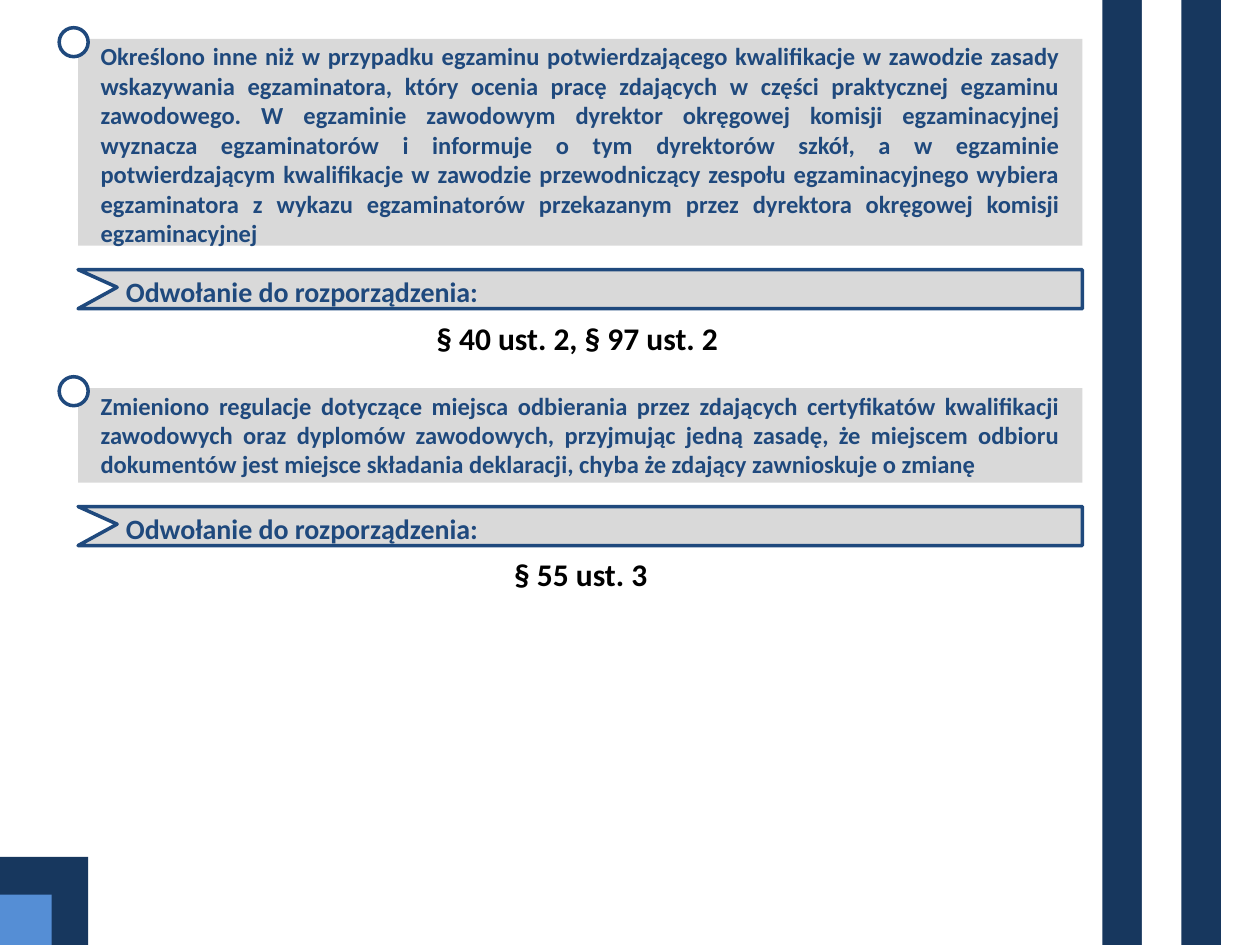
from dataclasses import dataclass

from pptx import Presentation
from pptx.dml.color import RGBColor
from pptx.enum.shapes import MSO_SHAPE as Shape
from pptx.enum.text import MSO_ANCHOR as Anchor, PP_ALIGN as Align
from pptx.util import Inches, Pt


@dataclass(frozen=True)
class Theme:
    font: str = "Calibri"
    navy: str = "17375E"
    blue: str = "558ED5"
    accent: str = "1F497D"
    panel: str = "D9D9D9"
    white: str = "FFFFFF"
    black: str = "000000"
    body_size: int = 14
    heading_size: int = 16
    reference_size: int = 18
    line_width: int = 2


THEME = Theme()
SLIDE_WIDTH, SLIDE_HEIGHT = 10, 7.5
BANNER_HEIGHT = 0.31
SECTIONS = [
    (0.31, 1.64,
     "Określono inne niż w przypadku egzaminu potwierdzającego kwalifikacje w zawodzie "
     "zasady wskazywania egzaminatora, który ocenia pracę zdających w części praktycznej "
     "egzaminu zawodowego. W egzaminie zawodowym dyrektor okręgowej komisji egzaminacyjnej "
     "wyznacza egzaminatorów i informuje o tym dyrektorów szkół, a w egzaminie "
     "potwierdzającym kwalifikacje w zawodzie przewodniczący zespołu egzaminacyjnego "
     "wybiera egzaminatora z wykazu egzaminatorów przekazanym przez dyrektora okręgowej "
     "komisji egzaminacyjnej",
     "§ 40 ust. 2, § 97 ust. 2 "),
    (3.08, 0.75,
     "Zmieniono regulacje dotyczące miejsca odbierania przez zdających certyfikatów "
     "kwalifikacji zawodowych oraz dyplomów zawodowych, przyjmując jedną zasadę, że "
     "miejscem odbioru dokumentów jest miejsce składania deklaracji, chyba że zdający "
     "zawnioskuje o zmianę",
     "§ 55 ust. 3"),
]


def style_shape(shape, fill, line=None):
    shape.shadow.inherit = False
    shape.fill.solid()
    shape.fill.fore_color.rgb = RGBColor.from_string(fill)
    if line:
        shape.line.color.rgb = RGBColor.from_string(line)
        shape.line.width = Pt(THEME.line_width)
    else:
        shape.line.fill.background()


def add_block(slide, kind, left, top, width, height, fill, line=None):
    shape = slide.shapes.add_shape(
        kind, Inches(left), Inches(top), Inches(width), Inches(height))
    style_shape(shape, fill, line)


def write_text(frame, text, size, color, align):
    frame.word_wrap = True
    paragraph = frame.paragraphs[0]
    paragraph.alignment = align
    run = paragraph.add_run()
    run.text = text
    run.font.name = THEME.font
    run.font.size = Pt(size)
    run.font.bold = True
    run.font.color.rgb = RGBColor.from_string(color)


def add_text(slide, left, top, width, height, text, size, color, align):
    box = slide.shapes.add_textbox(
        Inches(left), Inches(top), Inches(width), Inches(height))
    write_text(box.text_frame, text, size, color, align)


def add_banner(slide, left, top, width, height, text):
    """Draw a heading bar with a notch cut into its left side."""
    right, bottom = left + width, top + height
    notch = (left + height, top + 0.14)
    corners = [(right, top), (right, bottom), (left, bottom), notch]
    builder = slide.shapes.build_freeform(Inches(left), Inches(top))
    builder.add_line_segments([(Inches(x), Inches(y)) for x, y in corners], close=True)
    banner = builder.convert_to_shape()
    style_shape(banner, THEME.panel, THEME.accent)
    frame = banner.text_frame
    frame.vertical_anchor = Anchor.MIDDLE
    frame.margin_left = Inches(0.38)
    frame.margin_top, frame.margin_bottom = Inches(0.04), 0
    write_text(frame, text, THEME.heading_size, THEME.accent, Align.LEFT)


def add_section(slide, left, top, width, height, text, reference):
    """Place a grey panel with its ring, heading bar and cited paragraph."""
    add_block(slide, Shape.RECTANGLE, left, top, width, height, THEME.panel)
    add_text(slide, left + 0.08, top - 0.03, width - 0.16, height, text,
             THEME.body_size, THEME.accent, Align.JUSTIFY)
    add_block(slide, Shape.OVAL, left - 0.15, top - 0.09, 0.23, 0.23,
              THEME.white, THEME.accent)
    banner_top = top + height + 0.19
    add_banner(slide, left, banner_top, width, BANNER_HEIGHT,
               "Odwołanie do rozporządzenia:")
    add_text(slide, left - 0.23, banner_top + 0.34, width + 0.47, 0.4, reference,
             THEME.reference_size, THEME.black, Align.CENTER)


def add_corner(slide, width, height):
    """Nest two blocks in the bottom left corner of the slide."""
    blocks = [(width, height, THEME.navy), (width - 0.29, height - 0.3, THEME.blue)]
    for block_width, block_height, color in blocks:
        add_block(slide, Shape.RECTANGLE, 0, SLIDE_HEIGHT - block_height,
                  block_width, block_height, color)


def add_stripes(slide, left, top, width, height):
    colors = [THEME.navy, THEME.white, THEME.navy]
    stripe = width / len(colors)
    for index, color in enumerate(colors):
        add_block(slide, Shape.RECTANGLE, left + index * stripe, top,
                  stripe, height, color)


def main():
    presentation = Presentation()
    presentation.slide_width = Inches(SLIDE_WIDTH)
    presentation.slide_height = Inches(SLIDE_HEIGHT)
    slide = presentation.slides.add_slide(presentation.slide_layouts[6])
    add_corner(slide, 0.7, 0.7)
    add_stripes(slide, 8.75, 0, 0.94, SLIDE_HEIGHT)
    for top, height, text, reference in SECTIONS:
        add_section(slide, 0.62, top, 7.97, height, text, reference)
    presentation.save("out.pptx")


if __name__ == "__main__":
    main()
